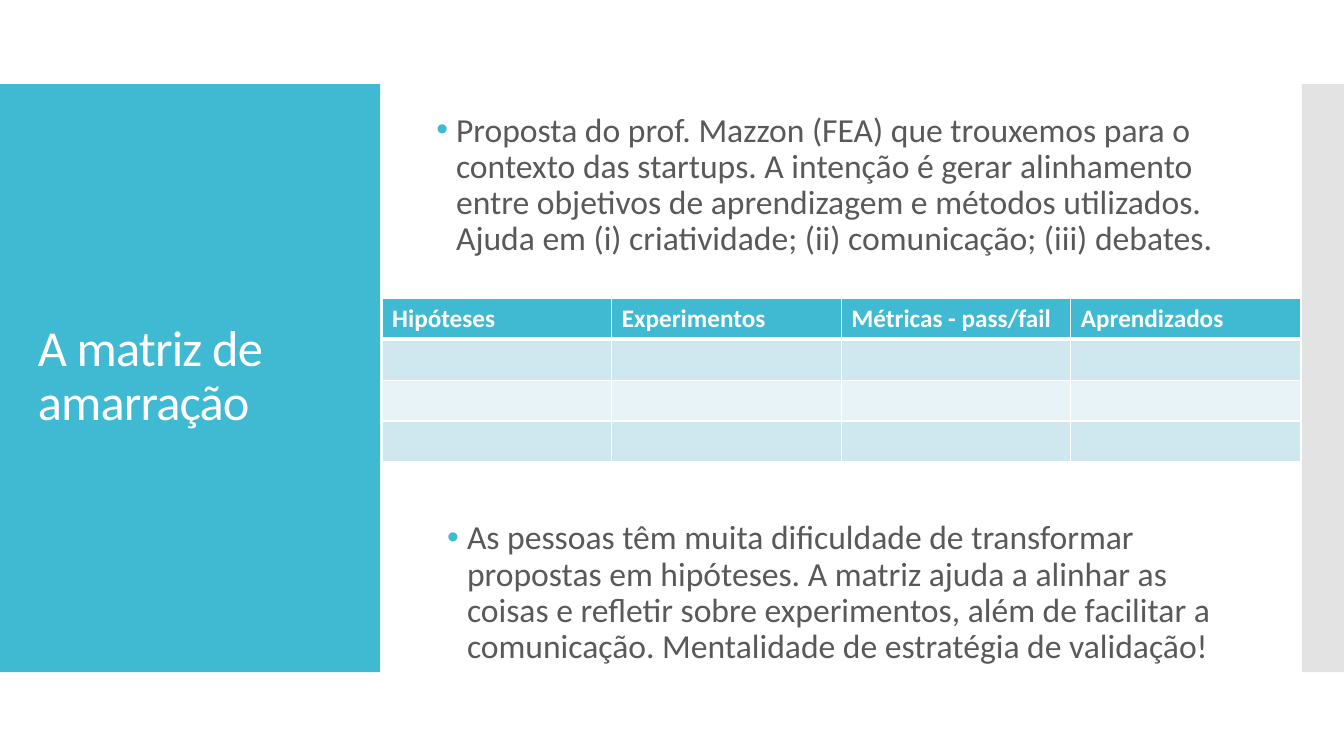
"""Build the slide on the hypothesis matrix with its title, texts and table."""
from lxml.etree import SubElement
from pptx import Presentation
from pptx.dml.color import RGBColor
from pptx.enum.shapes import MSO_SHAPE
from pptx.enum.text import MSO_ANCHOR, MSO_AUTO_SIZE, PP_ALIGN
from pptx.oxml.ns import qn
from pptx.util import Cm, Pt

TEAL = RGBColor(0x40, 0xBA, 0xD2)
SILVER = RGBColor(0xC8, 0xC8, 0xC8)
WHITE = RGBColor(0xFF, 0xFF, 0xFF)
GRAY = RGBColor(0x59, 0x59, 0x59)
BAND_DARK = RGBColor(0xCF, 0xE7, 0xEE)
BAND_LIGHT = RGBColor(0xE8, 0xF3, 0xF7)

FONT = "Calibri"
PANEL_TOP, PANEL_HEIGHT = Cm(2.12), Cm(14.82)
TEXT_WIDTH, TEXT_HEIGHT = Cm(20.32), Cm(4.57)
HEADINGS = ("Hipóteses", "Experimentos", "Métricas - pass/fail", "Aprendizados")
ROW_FILLS = (TEAL, BAND_DARK, BAND_LIGHT, BAND_DARK)
PROPOSAL = (
    "Proposta do prof. Mazzon (FEA) que trouxemos para o contexto das startups. "
    "A intenção é gerar alinhamento entre objetivos de aprendizagem e métodos "
    "utilizados. Ajuda em (i) criatividade; (ii) comunicação; (iii) debates."
)
DIFFICULTY = (
    "As pessoas têm muita dificuldade de transformar propostas em hipóteses. "
    "A matriz ajuda a alinhar as coisas e refletir sobre experimentos, além de "
    "facilitar a comunicação. Mentalidade de estratégia de validação!"
)


def add_color(parent, color, opacity=None):
    """Append a colour element to an XML parent."""
    value = SubElement(parent, qn("a:srgbClr"), val=str(color))
    if opacity is not None:
        SubElement(value, qn("a:alpha"), val=str(opacity * 1000))


def add_panel(page, left, width, color, opacity=100):
    """Draw a side panel behind the title."""
    panel = page.shapes.add_shape(
        MSO_SHAPE.RECTANGLE, left, PANEL_TOP, width, PANEL_HEIGHT)
    panel.shadow.inherit = False
    panel.line.fill.background()
    panel.fill.solid()
    panel.fill.fore_color.rgb = color
    if opacity < 100:
        solid = panel.element.spPr.find(qn("a:solidFill"))
        solid.clear()
        add_color(solid, color, opacity)
    page.shapes.title.element.addprevious(panel.element)


def place(box, left, top, width, height):
    """Move and resize a box."""
    box.left, box.top, box.width, box.height = left, top, width, height


def write(frame, text, size, color, bold=False, spacing=None, tracking=None):
    """Write one formatted paragraph in a text frame and return it."""
    para = frame.paragraphs[0]
    para.alignment = PP_ALIGN.LEFT
    if spacing:
        para.line_spacing = spacing
    span = para.add_run()
    span.text = text
    span.font.name = FONT
    span.font.size = Pt(size)
    span.font.bold = bold
    span.font.color.rgb = color
    if tracking:
        span.font._element.set("spc", str(tracking))
    return para


def prepare_frame(box):
    """Wrap and centre the text of a box vertically."""
    frame = box.text_frame
    frame.word_wrap = True
    frame.auto_size = MSO_AUTO_SIZE.NONE
    frame.vertical_anchor = MSO_ANCHOR.MIDDLE
    return frame


def write_bullet(box, text):
    """Fill a box with one bulleted paragraph."""
    para = write(prepare_frame(box), text, size=24, color=GRAY, spacing=0.9)
    para.space_before = Pt(12)
    properties = para._p.get_or_add_pPr()
    properties.set("marL", str(Cm(0.5)))
    properties.set("indent", str(-Cm(0.5)))
    add_color(SubElement(properties, qn("a:buClr")), TEAL)
    SubElement(properties, qn("a:buFont"), typeface="Arial")
    SubElement(properties, qn("a:buChar"), char="•")


def add_border(cell, side, width):
    """Draw one white border of a cell."""
    line = SubElement(cell._tc.get_or_add_tcPr(), qn(f"a:ln{side}"), w=str(Pt(width)))
    add_color(SubElement(line, qn("a:solidFill")), WHITE)


def add_matrix(page):
    """Add the table with its headings and empty banded rows."""
    table = page.shapes.add_table(
        len(ROW_FILLS), len(HEADINGS), Cm(9.63), Cm(7.52), Cm(23.14), Cm(4.11)).table
    for row, color in enumerate(ROW_FILLS):
        for column, heading in enumerate(HEADINGS):
            cell = table.cell(row, column)
            for side in "LRTB":
                thick = (row, side) in ((0, "B"), (1, "T"))
                add_border(cell, side, 3 if thick else 1)
            cell.fill.solid()
            cell.fill.fore_color.rgb = color
            if row == 0:
                write(cell.text_frame, heading, size=18, color=WHITE, bold=True)


def main():
    """Build and save the deck."""
    deck = Presentation()
    deck.slide_width, deck.slide_height = Cm(33.87), Cm(19.05)
    page = deck.slides.add_slide(deck.slide_layouts[1])

    add_panel(page, Cm(0), Cm(9.58), TEAL)
    add_panel(page, Cm(32.81), Cm(1.06), SILVER, opacity=50)

    title = page.shapes.title
    place(title, Cm(0.7), Cm(3.12), Cm(8.19), Cm(12.78))
    write(prepare_frame(title), "A matriz de amarração",
          size=36, color=WHITE, spacing=0.9, tracking=-60)

    body = page.placeholders[1]
    place(body, Cm(10.74), Cm(2.39), TEXT_WIDTH, TEXT_HEIGHT)
    write_bullet(body, PROPOSAL)

    add_matrix(page)

    closing = page.shapes.add_textbox(Cm(11.02), Cm(12.67), TEXT_WIDTH, TEXT_HEIGHT)
    write_bullet(closing, DIFFICULTY)

    deck.save("out.pptx")


if __name__ == "__main__":
    main()
